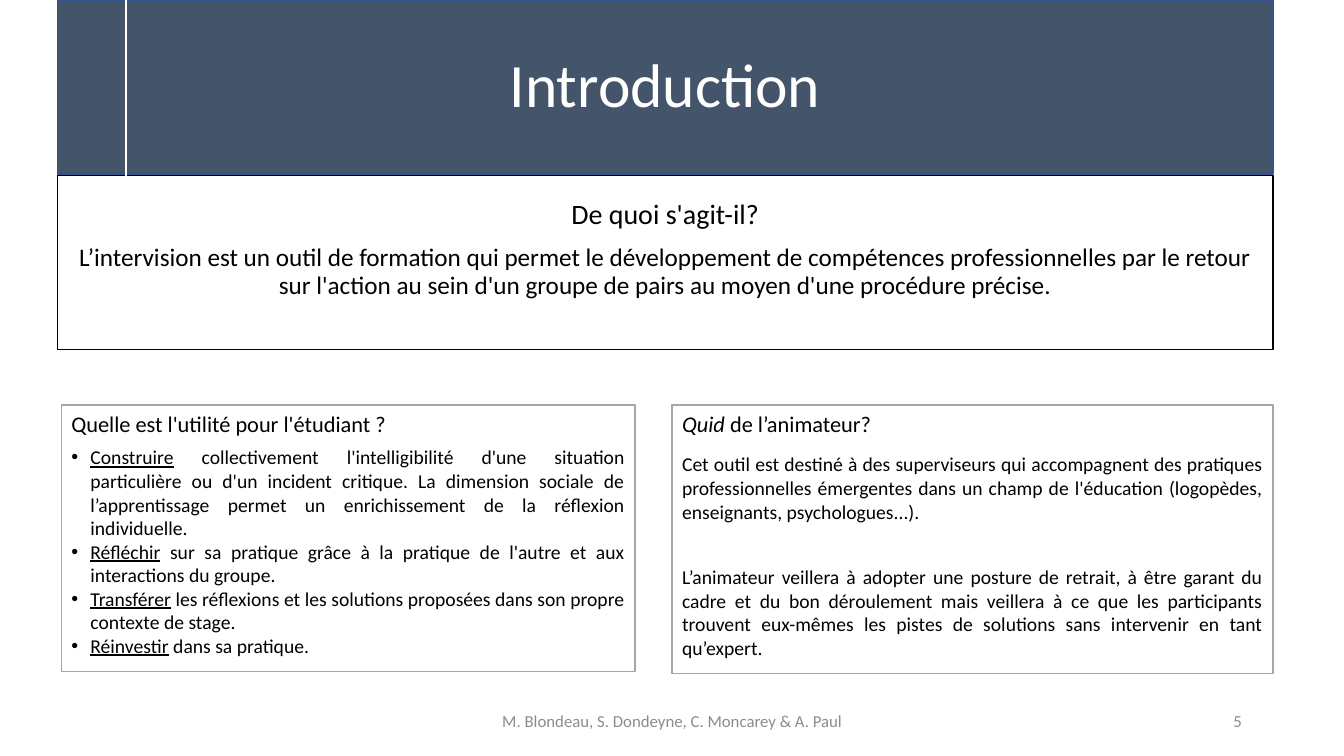
import pptx
import pptx.dml.color
import pptx.enum.shapes
import pptx.enum.text
import pptx.util
from lxml import etree

Cm = pptx.util.Cm
Pt = pptx.util.Pt
Align = pptx.enum.text.PP_ALIGN
Anchor = pptx.enum.text.MSO_ANCHOR


def color(value):
    return pptx.dml.color.RGBColor.from_string(value)


class SlideBuilder:
    font = "Calibri"
    ink = "000000"
    white = "FFFFFF"
    navy = "44546A"
    navy_border = "325491"
    gray = "A5A5A5"
    footer_gray = "8C8C8C"
    bullet_indent = Cm(0.48)

    def __init__(self, presentation):
        self.slide = presentation.slides.add_slide(presentation.slide_layouts[6])

    def box(self, left, top, width, height, fill, border, anchor=Anchor.TOP):
        shape = self.slide.shapes.add_shape(
            pptx.enum.shapes.MSO_SHAPE.RECTANGLE, Cm(left), Cm(top), Cm(width), Cm(height))
        shape.shadow.inherit = False
        shape.fill.solid()
        shape.fill.fore_color.rgb = color(fill)
        shape.line.color.rgb = color(border)
        shape.line.width = Pt(1)
        return self.prepare(shape, anchor)

    def label(self, left, top, width, height):
        shape = self.slide.shapes.add_textbox(Cm(left), Cm(top), Cm(width), Cm(height))
        return self.prepare(shape, Anchor.MIDDLE)

    def prepare(self, shape, anchor):
        shape.text_frame.word_wrap = True
        shape.text_frame.vertical_anchor = anchor
        return shape.text_frame

    def add_text(self, frame, runs, size, align=Align.LEFT, ink=ink, before=0, spacing=1.0, bullet=False):
        paragraph = frame.paragraphs[0]
        if paragraph.runs:
            paragraph = frame.add_paragraph()
        paragraph.alignment = align
        paragraph.space_before = Pt(before)
        paragraph.line_spacing = spacing
        for text, style in runs:
            run = paragraph.add_run()
            run.text = text
            run.font.name = self.font
            run.font.size = Pt(size)
            run.font.color.rgb = color(ink)
            run.font.italic = style == "italic"
            run.font.underline = style == "underline"
        if bullet:
            properties = paragraph._p.get_or_add_pPr()
            properties.set("marL", str(self.bullet_indent))
            properties.set("indent", str(-self.bullet_indent))
            etree.SubElement(properties, pptx.oxml.ns.qn("a:buFont")).set("typeface", "Arial")
            etree.SubElement(properties, pptx.oxml.ns.qn("a:buChar")).set("char", "•")

    def line(self, start_x, start_y, end_x, end_y, stroke):
        connector = self.slide.shapes.add_connector(
            pptx.enum.shapes.MSO_CONNECTOR.STRAIGHT, Cm(start_x), Cm(start_y), Cm(end_x), Cm(end_y))
        connector.line.color.rgb = color(stroke)
        connector.line.width = Pt(1)
        etree.SubElement(connector._element.spPr, pptx.oxml.ns.qn("a:effectLst"))


def main():
    presentation = pptx.Presentation()
    presentation.slide_width = Cm(33.87)
    presentation.slide_height = Cm(19.05)
    builder = SlideBuilder(presentation)

    authors = builder.label(11.23, 17.65, 11.43, 1.02)
    builder.add_text(authors, [("M. Blondeau, S. Dondeyne, C. Moncarey & A. Paul", "")], 12,
                     Align.CENTER, builder.footer_gray)
    number = builder.label(23.93, 17.65, 7.62, 1.02)
    builder.add_text(number, [("5", "")], 12, Align.RIGHT, builder.footer_gray)

    definition = builder.box(1.45, 4.42, 30.63, 4.39, builder.white, builder.ink)
    definition.margin_top = Cm(0.64)
    builder.add_text(definition, [("De quoi s'agit-il?", "")], 20, Align.CENTER, spacing=0.9)
    builder.add_text(definition, [(
        "L’intervision est un outil de formation qui permet le développement de compétences "
        "professionnelles par le retour sur l'action au sein d'un groupe de pairs au moyen "
        "d'une procédure précise.", "")], 18, Align.CENTER, before=10, spacing=0.9)

    facilitator = builder.box(16.94, 10.21, 15.14, 6.76, builder.white, builder.gray)
    builder.add_text(facilitator, [("Quid", "italic"), (" de l’animateur?", "")], 16)
    facilitator_texts = [
        (11, "Cet outil est destiné à des superviseurs qui accompagnent des pratiques "
             "professionnelles émergentes dans un champ de l'éducation (logopèdes, "
             "enseignants, psychologues...)."),
        (30, "L’animateur veillera à adopter une posture de retrait, à être garant du cadre "
             "et du bon déroulement mais veillera à ce que les participants trouvent "
             "eux-mêmes les pistes de solutions sans intervenir en tant qu’expert."),
    ]
    for before, text in facilitator_texts:
        builder.add_text(facilitator, [(text, "")], 14, Align.JUSTIFY, before=before)

    student = builder.box(1.55, 10.21, 14.45, 6.71, builder.white, builder.gray)
    builder.add_text(student, [("Quelle est l'utilité pour l'étudiant ?", "")], 16)
    benefits = [
        ("Construire", " collectivement l'intelligibilité d'une situation particulière ou d'un "
                       "incident critique. La dimension sociale de l’apprentissage permet un "
                       "enrichissement de la réflexion individuelle."),
        ("Réfléchir", " sur sa pratique grâce à la pratique de l'autre et aux interactions du groupe."),
        ("Transférer", " les réflexions et les solutions proposées dans son propre contexte de stage."),
        ("Réinvestir", " dans sa pratique."),
    ]
    for index, (verb, detail) in enumerate(benefits):
        builder.add_text(student, [(verb, "underline"), (detail, "")], 14, Align.JUSTIFY,
                         before=0 if index else 6, bullet=True)

    banner = builder.box(1.45, 0, 30.63, 4.39, builder.navy, builder.navy_border, Anchor.MIDDLE)
    builder.add_text(banner, [("Introduction", "")], 44, Align.CENTER, builder.white, spacing=0.9)
    builder.line(3.18, 0, 3.18, 4.45, builder.white)

    presentation.save("out.pptx")


if __name__ == "__main__":
    main()
